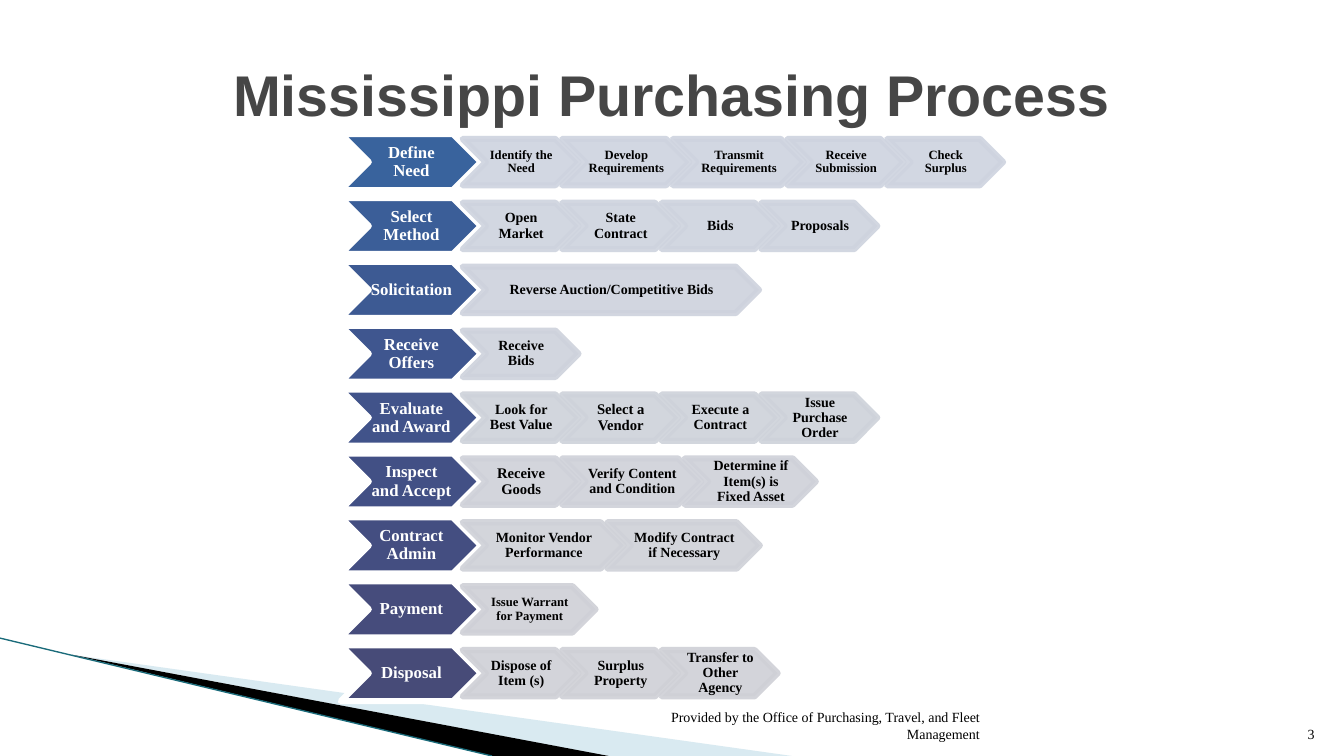
from typing import NamedTuple

from lxml.etree import SubElement
from pptx import Presentation
from pptx.dml.color import RGBColor
from pptx.enum.shapes import MSO_CONNECTOR, MSO_SHAPE
from pptx.enum.text import MSO_ANCHOR, PP_ALIGN
from pptx.oxml.ns import qn
from pptx.util import Cm, Pt

COLORS = {
    "title": "464646", "text": "000000", "white": "FFFFFF",
    "wedge": "A0CBDC", "stripe": "000000", "edge": "1A6B7A",
    "first_step": "CED3DF", "last_step": "CFD0D6",
    "Define Need": "39639D", "Select Method": "3B5E98", "Solicitation": "3D5A93",
    "Receive Offers": "3F568F", "Evaluate and Award": "41538A",
    "Inspect and Accept": "425085", "Contract Admin": "444E81",
    "Payment": "464C7C", "Disposal": "474B78",
}
SERIF = "Times New Roman"


class Step(NamedTuple):
    """One light chevron: its text, width in cm and font size in points."""
    text: str
    width: float = 2.92
    size: float = 10


PROCESS = {
    "Define Need": [
        Step("Identify the Need", size=9), Step("Develop Requirements", 3.2, 9),
        Step("Transmit Requirements", 3.3, 9), Step("Receive Submission", size=9),
        Step("Check Surplus", size=9)],
    "Select Method": [
        Step("Open Market"), Step("State Contract"), Step("Bids"), Step("Proposals")],
    "Solicitation": [Step("Reverse Auction/Competitive Bids", 7.47)],
    "Receive Offers": [Step("Receive Bids")],
    "Evaluate and Award": [
        Step("Look for Best Value"), Step("Select a Vendor", size=10.5),
        Step("Execute a Contract"), Step("Issue Purchase Order")],
    "Inspect and Accept": [
        Step("Receive Goods", size=10.5), Step("Verify Content and Condition", 3.5),
        Step("Determine if Item(s) is Fixed Asset", 3.3)],
    "Contract Admin": [
        Step("Monitor Vendor Performance", 4.06), Step("Modify Contract if Necessary", 3.84)],
    "Payment": [Step("Issue Warrant for Payment", 3.35, 9)],
    "Disposal": [
        Step("Dispose of Item (s)"), Step("Surplus Property"), Step("Transfer to Other Agency")],
}


def blend(first, last, share):
    """Return the hex colour that lies the given share of the way between two."""
    pairs = zip(RGBColor.from_string(first), RGBColor.from_string(last))
    return str(RGBColor(*(round(a + (b - a) * share) for a, b in pairs)))


def paint(fill, color, alpha=100):
    """Give a fill one solid colour with an opacity in percent."""
    fill.solid()
    fill.fore_color.rgb = RGBColor.from_string(color)
    if alpha < 100:
        rgb = fill._xPr.find(qn("a:solidFill"))[0]
        SubElement(rgb, qn("a:alpha"), val=str(alpha * 1000))


def write(s, text, size, color, font=SERIF, bold=False,
          align=PP_ALIGN.CENTER, anchor=MSO_ANCHOR.MIDDLE):
    """Put one formatted paragraph into a shape and return it."""
    tf = s.text_frame
    tf.word_wrap = True
    tf.vertical_anchor = anchor
    p = tf.paragraphs[0]
    p.text = text
    p.alignment = align
    p.font.name, p.font.size, p.font.bold = font, Pt(size), bold
    p.font.color.rgb = RGBColor.from_string(color)
    return p


def add_text(sp, left, top, width, height, text, size, color, **style):
    """Add a text box holding one paragraph."""
    s = sp.add_textbox(Cm(left), Cm(top), Cm(width), Cm(height))
    write(s, text, size, color, **style)


def add_chevron(sp, left, top, width, height, text, size, color, fill, line, alpha=100):
    """Add a chevron with a thick round-cornered outline and bold text."""
    s = sp.add_shape(MSO_SHAPE.CHEVRON, Cm(left), Cm(top), Cm(width), Cm(height))
    s.shadow.inherit = False
    paint(s.fill, fill, alpha)
    s.line.width = Pt(4.33)
    paint(s.line.fill, line, alpha)
    SubElement(s.line._ln, qn("a:round"))
    tf = s.text_frame
    tf.margin_left, tf.margin_right = Cm(0.03), 0
    tf.margin_top = tf.margin_bottom = Cm(0.03)
    write(s, text, size, color, bold=True).line_spacing = 0.9


def add_process_row(sp, left, top, label, steps, step_fill):
    """Add a dark label chevron followed by its overlapping steps."""
    add_chevron(sp, left, top, 3.53, 1.41, label, 12, COLORS["white"],
                COLORS[label], COLORS["white"])
    x = left + 3.07
    for step in steps:
        add_chevron(sp, x, top + 0.12, step.width, 1.17, step.text, step.size,
                    COLORS["text"], step_fill, step_fill, alpha=90)
        x += step.width - 0.41


def add_process(sp, left, top, pitch):
    """Stack all process rows with step colours shifting from first to last."""
    for i, (label, steps) in enumerate(PROCESS.items()):
        fill = blend(COLORS["first_step"], COLORS["last_step"], i / (len(PROCESS) - 1))
        add_process_row(sp, left, top + i * pitch, label, steps, fill)


def add_swoosh(sp, left, top, bottom):
    """Draw the wedge, the stripe and the edge line in the lower left corner."""
    tip = (left + 1.82, top + 0.42)
    for name, right, inner, alpha in (("wedge", 19.96, 15.3, 40), ("stripe", 15.34, 12.4, 100)):
        builder = sp.build_freeform(Cm(tip[0]), Cm(tip[1]))
        builder.add_line_segments([(Cm(left + x), Cm(bottom)) for x in (right, inner)])
        s = builder.convert_to_shape()
        s.shadow.inherit = False
        paint(s.fill, COLORS[name], alpha)
        s.line.fill.background()
    s = sp.add_connector(MSO_CONNECTOR.STRAIGHT, Cm(left), Cm(top), Cm(left + 12.4), Cm(bottom))
    s.line.width = Pt(0.95)
    s.line.color.rgb = RGBColor.from_string(COLORS["edge"])
    SubElement(s._element.spPr, qn("a:effectLst"))


def add_footer(sp, top, height):
    """Add the credit line and the slide number."""
    for left, width, text in (
            (16.23, 8.71, "Provided by the Office of Purchasing, Travel, and Fleet Management"),
            (32.03, 1.35, "3")):
        add_text(sp, left, top, width, height, text, 10, COLORS["text"],
                 align=PP_ALIGN.RIGHT, anchor=MSO_ANCHOR.BOTTOM)


def main():
    """Build the slide and save it."""
    prs = Presentation()
    prs.slide_width, prs.slide_height = Cm(33.87), Cm(19.05)
    sp = prs.slides.add_slide(prs.slide_layouts[6]).shapes
    add_swoosh(sp, 0, 16.08, 19.05)
    add_process(sp, 8.59, 3.38, 1.61)
    add_text(sp, 1.7, 0.76, 30.48, 3.18, "Mississippi Purchasing Process", 41,
             COLORS["title"], font="Arial", bold=True)
    add_footer(sp, 17.81, 1.01)
    prs.save("out.pptx")


if __name__ == "__main__":
    main()
